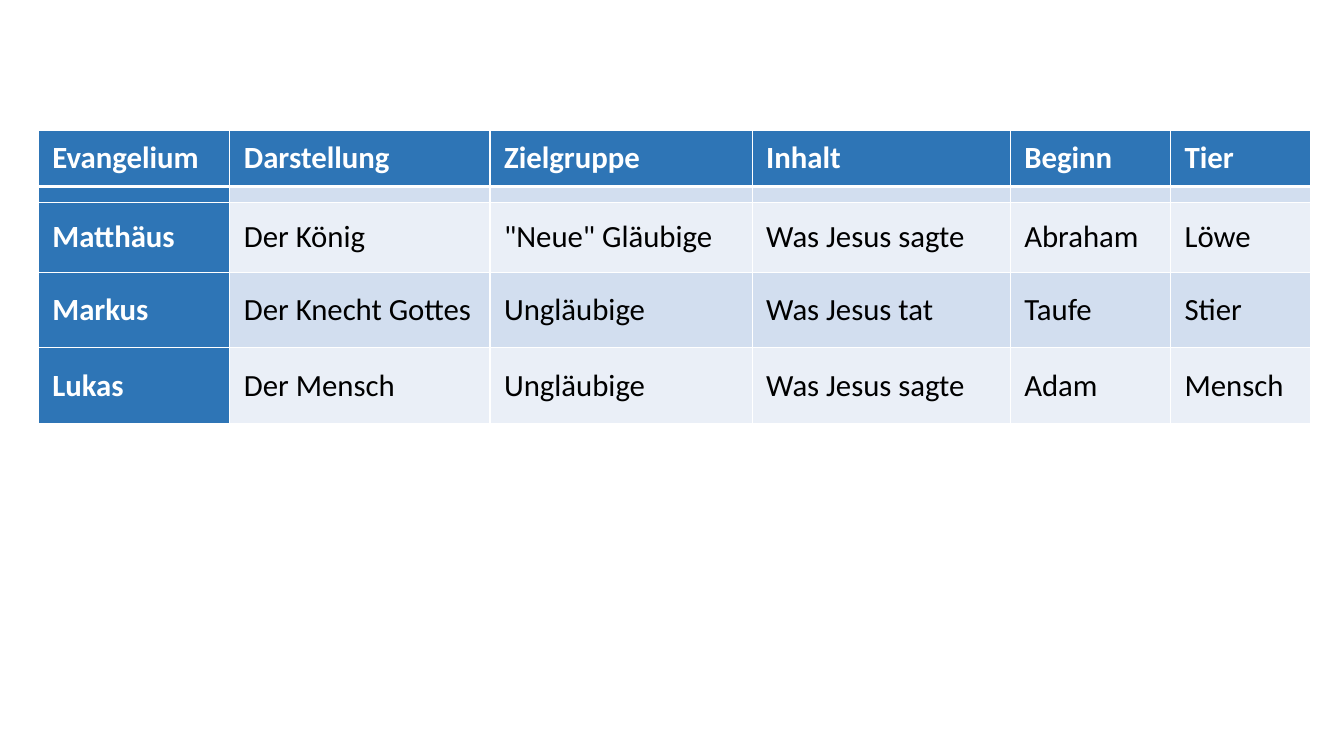
import pptx
import pptx.util
import pptx.dml.color
import pptx.enum.text
import pptx.oxml.ns
from lxml import etree

PX = 9144  # 100 px to the inch
FONT = "Calibri"
BLUE, WHITE, BLACK = "2E75B6", "FFFFFF", "000000"
BANDS = ["D2DEEF", "EAEFF7"]
COLS = [190, 258, 260, 256, 159, 139]
ROWS = [56, 16, 69, 75, 75]
GOSPELS = [
    ["Evangelium", "Darstellung", "Zielgruppe", "Inhalt", "Beginn", "Tier"],
    [""] * 6,
    ["Matthäus", "Der König", '"Neue" Gläubige', "Was Jesus sagte", "Abraham", "Löwe"],
    ["Markus", "Der Knecht Gottes", "Ungläubige", "Was Jesus tat", "Taufe", "Stier"],
    ["Lukas", "Der Mensch", "Ungläubige", "Was Jesus sagte", "Adam", "Mensch"],
]


def px(n):
    return pptx.util.Emu(n * PX)


def color(code):
    return pptx.dml.color.RGBColor.from_string(code)


def add_node(parent, tag, **attrs):
    return etree.SubElement(parent, pptx.oxml.ns.qn(tag), **attrs)


def set_edges(cell, row):
    """White rules, with a heavy one below the header."""
    props = cell._tc.get_or_add_tcPr()
    heavy = {(0, "B"), (1, "T")}
    for side in "LRTB":
        width = pptx.util.Pt(3 if (row, side) in heavy else 1)
        line = add_node(props, "a:ln" + side, w=str(width))
        fill = add_node(line, "a:solidFill")
        add_node(fill, "a:srgbClr", val=WHITE)


def set_text(cell, text, head, bold):
    para = cell.text_frame.paragraphs[0]
    if not text:
        # A small end mark keeps the spacer row thin
        add_node(para._p, "a:endParaRPr", sz="500")
        return
    para.text = text
    if head:
        para.alignment = pptx.enum.text.PP_ALIGN.JUSTIFY
    font = para.runs[0].font
    font.name = FONT
    font.size = pptx.util.Pt(22)
    font.bold = bold
    font.color.rgb = color(WHITE if bold else BLACK)


def set_cell(cell, text, row, col):
    label = row == 0 or col == 0
    cell.margin_left = cell.margin_right = px(14)
    cell.margin_top = cell.margin_bottom = 0
    cell.vertical_anchor = pptx.enum.text.MSO_ANCHOR.MIDDLE
    set_edges(cell, row)
    cell.fill.solid()
    cell.fill.fore_color.rgb = color(BLUE if label else BANDS[(row - 1) % 2])
    set_text(cell, text, row == 0, label)


def add_grid(slide, left, top):
    frame = slide.shapes.add_table(
        len(ROWS), len(COLS), px(left), px(top), px(sum(COLS)), px(sum(ROWS)))
    table = frame.table
    table.first_col = True
    for col, width in zip(table.columns, COLS):
        col.width = px(width)
    for row, height in zip(table.rows, ROWS):
        row.height = px(height)
    for r, texts in enumerate(GOSPELS):
        for c, text in enumerate(texts):
            set_cell(table.cell(r, c), text, r, c)


def main():
    # Slide
    deck = pptx.Presentation()
    deck.slide_width, deck.slide_height = px(1333), px(750)
    slide = deck.slides.add_slide(deck.slide_layouts[6])

    # Table of the gospels
    add_grid(slide, 38, 129)

    deck.save("out.pptx")


if __name__ == "__main__":
    main()
